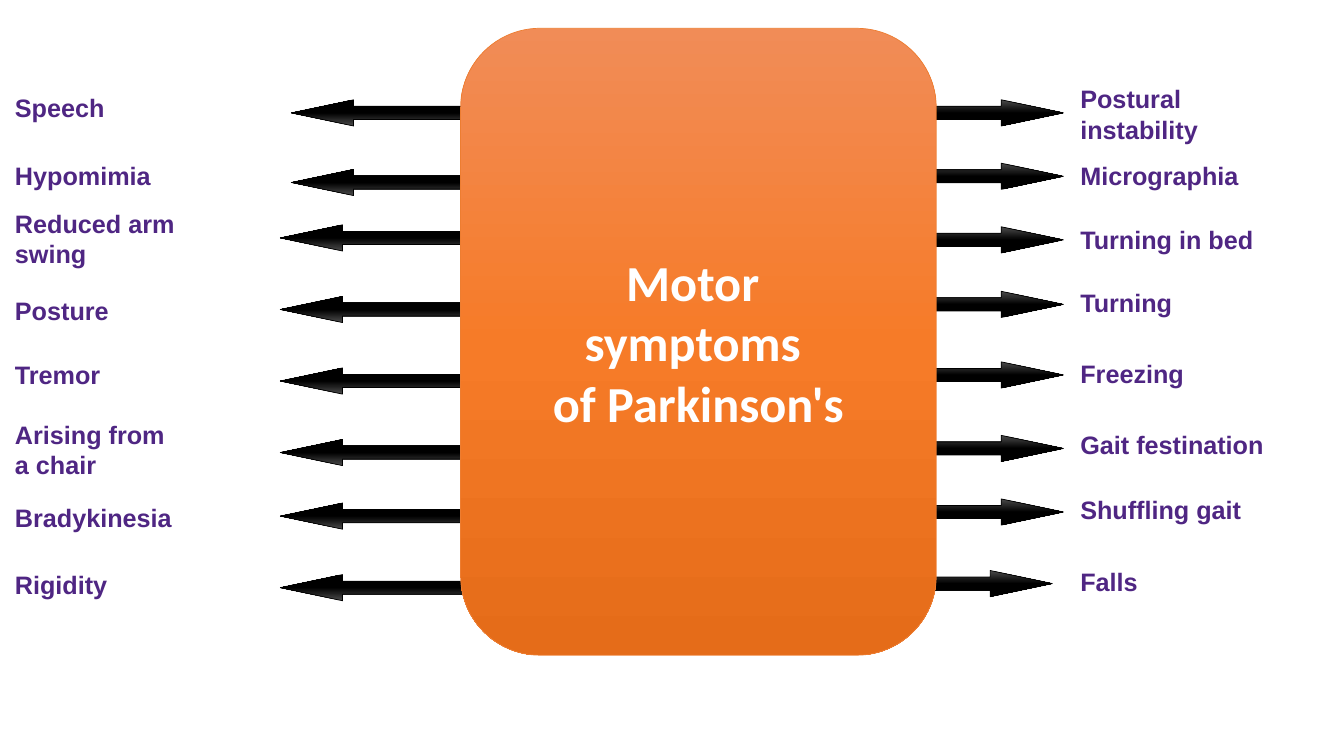
from dataclasses import dataclass
from lxml.etree import SubElement
from pptx import Presentation
from pptx.dml.color import RGBColor
from pptx.enum.shapes import MSO_SHAPE
from pptx.enum.text import MSO_ANCHOR, MSO_AUTO_SIZE, PP_ALIGN
from pptx.oxml.ns import qn
from pptx.shapes.autoshape import Shape
from pptx.slide import Slide
from pptx.text.text import TextFrame
from pptx.util import Pt


@dataclass(frozen=True)
class Theme:
    label_format: dict
    title_format: dict
    label_color: str = "4F2683"
    title_color: str = "FFFFFF"
    panel_line: str = "ED7D31"
    arrow_line: str = "000000"
    panel_stops: tuple[str, ...] = ("F18C57", "F67B28", "E56C19")
    arrow_stops: tuple[str, ...] = ("4B4B4B", "000000", "000000")


@dataclass(frozen=True)
class Symptom:
    lines: tuple[str, ...]
    label_top: float
    arrow_top: float
    arrow_inset: float = 0


@dataclass(frozen=True)
class Side:
    label_left: float
    arrow_left: float
    rotation: float
    symptoms: tuple[Symptom, ...]


THEME = Theme(
    label_format={"name": "Arial", "size": Pt(18), "bold": True},
    title_format={"name": "Calibri", "size": Pt(36), "bold": True},
)
PANEL = (329, 20.2, 339.8, 447.8)
TITLE_LINES = ("Motor ", "symptoms ", "of Parkinson's")
ARROW_WIDTH, ARROW_HEIGHT = 234, 18.7
LABEL_WIDTH, LINE_HEIGHT, LABEL_PADDING = 190, 21.6, 7.2

SIDES = (
    Side(3.6, 200.2, 180, (
        Symptom(("Speech",), 62.6, 71.3, 7.9),
        Symptom(("Hypomimia",), 110.9, 121, 7.9),
        Symptom(("Reduced arm", "swing"), 145.4, 160.6),
        Symptom(("Posture",), 207.4, 211.7),
        Symptom(("Tremor",), 253.4, 262.8),
        Symptom(("Arising from", "a chair"), 295.9, 313.9),
        Symptom(("Bradykinesia",), 355, 359.3),
        Symptom(("Rigidity",), 403.2, 410.4),
    )),
    Side(764.6, 525.6, 0, (
        Symptom(("Postural", "instability"), 56.2, 71.3),
        Symptom(("Micrographia",), 110.9, 116.6),
        Symptom(("Turning in bed",), 157, 162),
        Symptom(("Turning",), 201.6, 208.1),
        Symptom(("Freezing",), 252.7, 258.5),
        Symptom(("Gait festination",), 303.1, 311),
        Symptom(("Shuffling gait",), 349.9, 356.4),
        Symptom(("Falls",), 401, 407.5, -7.9),
    )),
)


def write_lines(frame: TextFrame, lines: tuple[str, ...], font_format: dict,
                color: str, alignment: PP_ALIGN) -> None:
    frame.word_wrap = True
    frame.auto_size = MSO_AUTO_SIZE.NONE
    for index, line in enumerate(lines):
        paragraph = frame.add_paragraph() if index else frame.paragraphs[0]
        paragraph.alignment = alignment
        run = paragraph.add_run()
        run.text = line
        for attribute, value in font_format.items():
            setattr(run.font, attribute, value)
        run.font.color.rgb = RGBColor.from_string(color)


def paint(shape: Shape, stops: tuple[str, ...], line_color: str) -> None:
    shape.shadow.inherit = False
    shape.line.color.rgb = RGBColor.from_string(line_color)
    shape.line.width = Pt(0.5)
    shape.fill.gradient()
    shape.fill.gradient_angle = 270
    stop_list = next(shape.element.iter(qn("a:gsLst")))
    stop_list.clear()
    for index, color in enumerate(stops):
        stop = SubElement(stop_list, qn("a:gs"), pos=str(index * 50000))
        SubElement(stop, qn("a:srgbClr"), val=color)


def add_arrow(slide: Slide, side: Side, symptom: Symptom) -> None:
    arrow = slide.shapes.add_shape(
        MSO_SHAPE.RIGHT_ARROW, Pt(side.arrow_left + symptom.arrow_inset),
        Pt(symptom.arrow_top), Pt(ARROW_WIDTH), Pt(ARROW_HEIGHT))
    arrow.rotation = side.rotation
    arrow.adjustments[0] = 0.5
    arrow.adjustments[1] = 2.375
    paint(arrow, THEME.arrow_stops, THEME.arrow_line)


def add_label(slide: Slide, side: Side, symptom: Symptom) -> None:
    height = LINE_HEIGHT * len(symptom.lines) + LABEL_PADDING
    label = slide.shapes.add_textbox(
        Pt(side.label_left), Pt(symptom.label_top), Pt(LABEL_WIDTH), Pt(height))
    write_lines(label.text_frame, symptom.lines, THEME.label_format,
                THEME.label_color, PP_ALIGN.LEFT)


def add_panel(slide: Slide) -> None:
    panel = slide.shapes.add_shape(
        MSO_SHAPE.ROUNDED_RECTANGLE, *(Pt(length) for length in PANEL))
    panel.adjustments[0] = 0.167
    paint(panel, THEME.panel_stops, THEME.panel_line)


def place_title(slide: Slide) -> None:
    title = slide.shapes.title
    for attribute, length in zip(("left", "top", "width", "height"), PANEL):
        setattr(title, attribute, Pt(length))
    title.text_frame.vertical_anchor = MSO_ANCHOR.MIDDLE
    write_lines(title.text_frame, TITLE_LINES, THEME.title_format,
                THEME.title_color, PP_ALIGN.CENTER)
    title.element.getparent().append(title.element)


def main() -> None:
    presentation = Presentation()
    presentation.slide_width = Pt(960)
    presentation.slide_height = Pt(540)
    slide = presentation.slides.add_slide(presentation.slide_layouts[5])
    for side in SIDES:
        for symptom in side.symptoms:
            add_arrow(slide, side, symptom)
    add_panel(slide)
    place_title(slide)
    for side in SIDES:
        for symptom in side.symptoms:
            add_label(slide, side, symptom)
    presentation.save("out.pptx")


if __name__ == "__main__":
    main()
